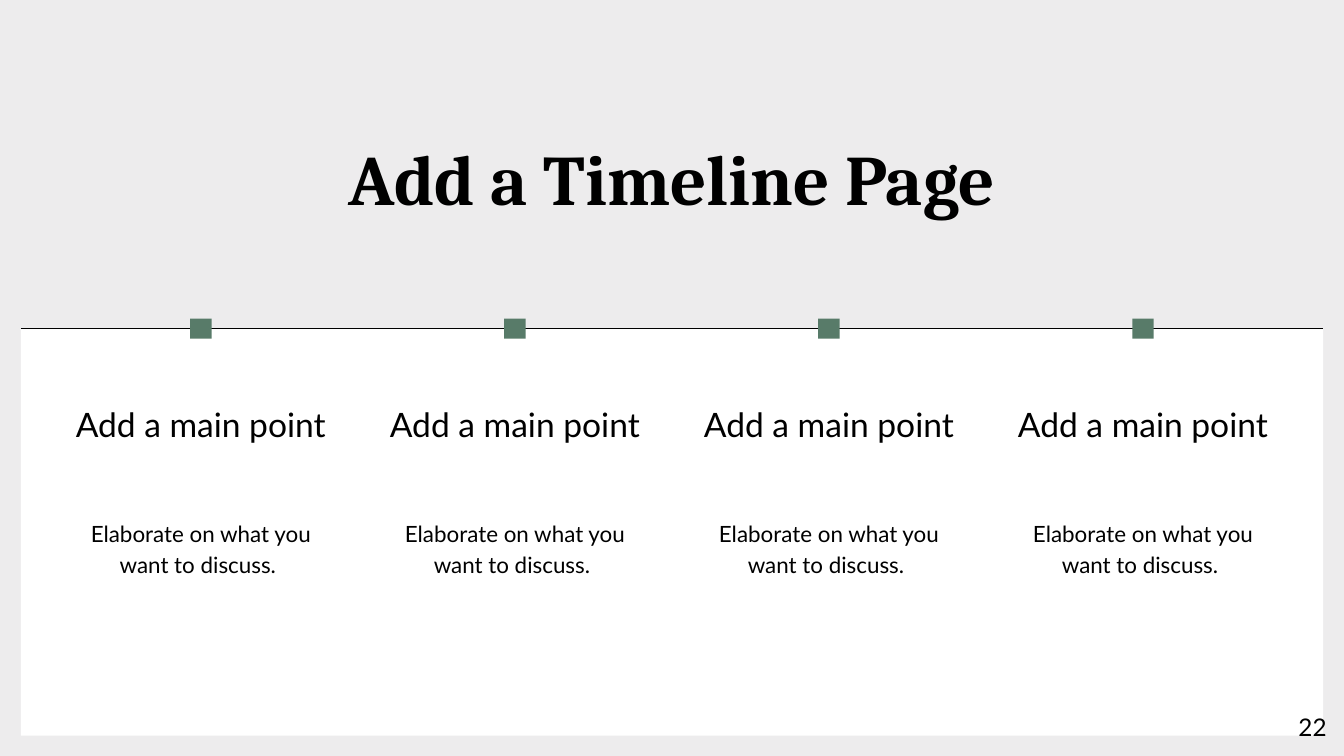
"""Build a timeline slide with four evenly spaced milestones."""
import pptx
import pptx.util
import pptx.dml.color
import pptx.enum.shapes
import pptx.enum.text
import pptx.oxml.ns
import lxml.etree

Inches = pptx.util.Inches
Align = pptx.enum.text.PP_ALIGN
Anchor = pptx.enum.text.MSO_ANCHOR

HEADLINE = "Add a Timeline Page"
PAGE_NUMBER = "22"
MILESTONES = [("Add a main point", "Elaborate on what you want to discuss. ")] * 4

BACKGROUND, PANEL, MARKER, INK = "EDECED", "FFFFFF", "587B69", "000000"
SLIDE_WIDTH = 10
SLIDE_HEIGHT = SLIDE_WIDTH * 9 / 16
MARGIN, COLUMN_WIDTH = 0.56, 1.87
CONTENT_WIDTH = SLIDE_WIDTH - 2 * MARGIN
PANEL_WIDTH, PANEL_HEIGHT, PANEL_BOTTOM_GAP = 9.69, 3.03, 0.15
PANEL_LEFT = (SLIDE_WIDTH - PANEL_WIDTH) / 2
AXIS_TOP = SLIDE_HEIGHT - PANEL_BOTTOM_GAP - PANEL_HEIGHT
MARKER_WIDTH, MARKER_HEIGHT = 0.16, 0.15


def color(value):
    return pptx.dml.color.RGBColor.from_string(value)


def add_block(shapes, left, top, width, height, fill):
    block = shapes.add_shape(pptx.enum.shapes.MSO_SHAPE.RECTANGLE,
                             Inches(left), Inches(top), Inches(width), Inches(height))
    block.shadow.inherit = False
    block.fill.solid()
    block.fill.fore_color.rgb = color(fill)
    block.line.fill.background()


def add_label(shapes, text, left, top, width, height, size, font="Lato", bold=False,
              align=Align.CENTER, anchor=Anchor.TOP, spacing=1.0):
    frame = shapes.add_textbox(Inches(left), Inches(top), Inches(width), Inches(height)).text_frame
    frame.word_wrap = True
    frame.vertical_anchor = anchor
    frame.margin_left = frame.margin_right = frame.margin_top = frame.margin_bottom = 0
    paragraph = frame.paragraphs[0]
    paragraph.text = text
    paragraph.alignment = align
    paragraph.line_spacing = spacing
    paragraph.font.name = font
    paragraph.font.size = pptx.util.Pt(size)
    paragraph.font.bold = bold
    paragraph.font.color.rgb = color(INK)


def add_axis(shapes):
    axis = shapes.add_connector(pptx.enum.shapes.MSO_CONNECTOR.STRAIGHT,
                                Inches(PANEL_LEFT), Inches(AXIS_TOP),
                                Inches(PANEL_LEFT + PANEL_WIDTH), Inches(AXIS_TOP))
    axis.line.color.rgb = color(INK)
    axis.line.width = pptx.util.Pt(0.75)
    lxml.etree.SubElement(axis._element.spPr, pptx.oxml.ns.qn("a:effectLst"))


def main():
    deck = pptx.Presentation()
    deck.slide_width, deck.slide_height = Inches(SLIDE_WIDTH), Inches(SLIDE_HEIGHT)
    slide = deck.slides.add_slide(deck.slide_layouts[6])
    slide.background.fill.solid()
    slide.background.fill.fore_color.rgb = color(BACKGROUND)

    add_block(slide.shapes, PANEL_LEFT, AXIS_TOP, PANEL_WIDTH, PANEL_HEIGHT, PANEL)
    add_axis(slide.shapes)
    add_label(slide.shapes, HEADLINE, MARGIN, 1, CONTENT_WIDTH, 0.64, 38, "Cambria", bold=True)

    pitch = (CONTENT_WIDTH - COLUMN_WIDTH) / (len(MILESTONES) - 1)
    for index, (point, detail) in enumerate(MILESTONES):
        left = MARGIN + index * pitch
        add_block(slide.shapes, left + (COLUMN_WIDTH - MARKER_WIDTH) / 2,
                  AXIS_TOP - MARKER_HEIGHT / 2, MARKER_WIDTH, MARKER_HEIGHT, MARKER)
        milestone = slide.shapes.add_group_shape().shapes
        add_label(milestone, point, left, 2.96, COLUMN_WIDTH, 0.65, 18, spacing=1.15)
        add_label(milestone, detail, left, 3.84, COLUMN_WIDTH, 0.43, 12, spacing=1.15)

    add_label(slide.shapes, PAGE_NUMBER, 9.27, 5.19, 0.6, 0.43, 13,
              align=Align.RIGHT, anchor=Anchor.MIDDLE)
    deck.save("out.pptx")


if __name__ == "__main__":
    main()
